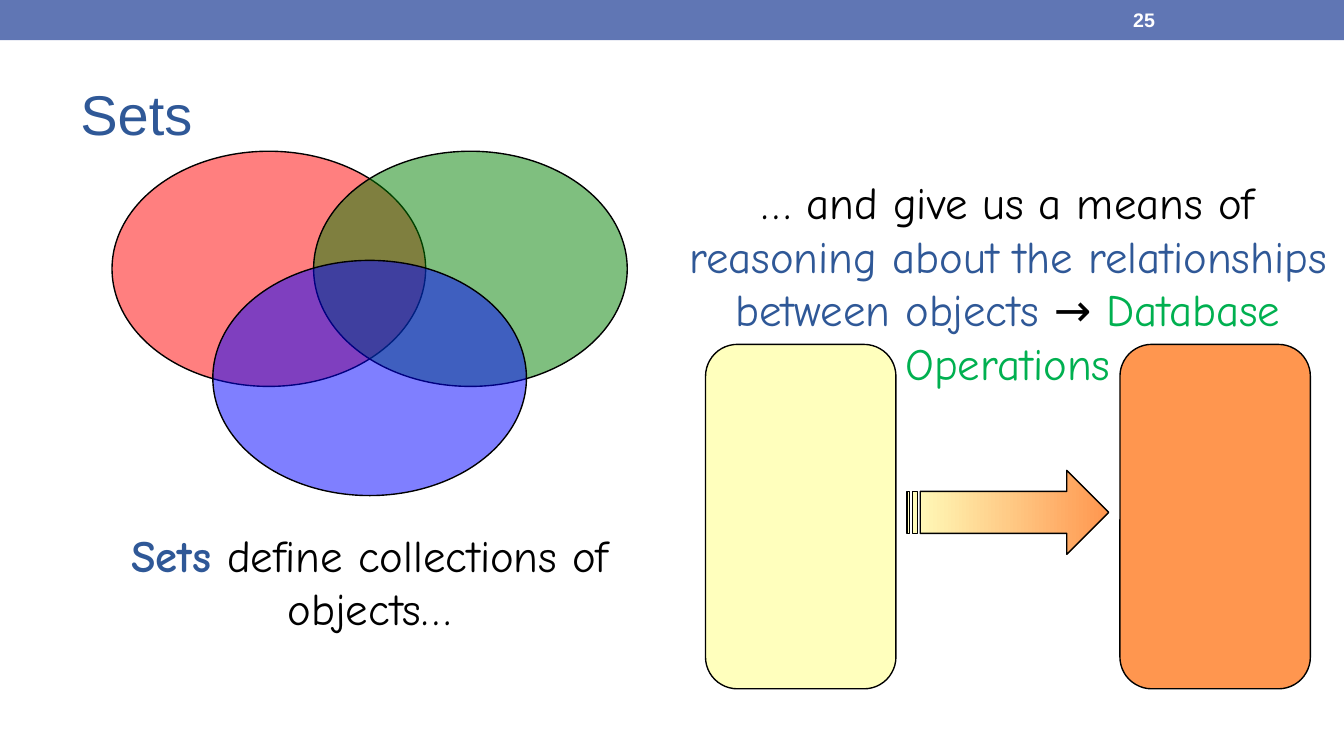
from dataclasses import dataclass
from lxml import etree
from pptx import Presentation
from pptx.dml.color import RGBColor
from pptx.enum.shapes import MSO_SHAPE
from pptx.enum.text import MSO_ANCHOR, MSO_AUTO_SIZE, PP_ALIGN
from pptx.oxml.ns import qn
from pptx.util import Pt

RECT = MSO_SHAPE.RECTANGLE
OVAL = MSO_SHAPE.OVAL
ROUND = MSO_SHAPE.ROUNDED_RECTANGLE
ARROW = MSO_SHAPE.STRIPED_RIGHT_ARROW
TOP, MIDDLE = MSO_ANCHOR.TOP, MSO_ANCHOR.MIDDLE
LEFT, CENTER = PP_ALIGN.LEFT, PP_ALIGN.CENTER
GROW = MSO_AUTO_SIZE.SHAPE_TO_FIT_TEXT


@dataclass(frozen=True)
class Theme:
    bar: str = "6076B4"
    blue: str = "2F5897"
    black: str = "000000"
    white: str = "FFFFFF"
    green: str = "00B050"
    cream: str = "FFFFBD"
    orange: str = "FF964F"
    sets: tuple = ("FF0000", "008000", "0000FF")
    alpha: int = 50
    sans: str = "Arial"
    hand: str = "Comic Neue"
    title: float = 30
    body: float = 24
    small: float = 10.5
    line: float = 0.75


THEME = Theme()


def color(code):
    return RGBColor.from_string(code)


def add_shape(slide, kind, box, fill=None, line=THEME.black):
    shape = slide.shapes.add_shape(kind, *map(Pt, box))
    shape.shadow.inherit = False
    if fill:
        shape.fill.solid()
        shape.fill.fore_color.rgb = color(fill)
    if line:
        shape.line.color.rgb = color(line)
        shape.line.width = Pt(THEME.line)
    else:
        shape.line.fill.background()
    return shape


def add_text(slide, box, parts, size, font, align=LEFT, anchor=TOP):
    shape = slide.shapes.add_textbox(*map(Pt, box))
    frame = shape.text_frame
    frame.word_wrap = True
    frame.vertical_anchor = anchor
    if anchor == TOP:
        frame.auto_size = GROW
    para = frame.paragraphs[0]
    para.alignment = align
    for text, code, bold in parts:
        run = para.add_run()
        run.text = text
        run.font.name = font
        run.font.size = Pt(size)
        run.font.bold = bold
        run.font.color.rgb = color(code)


def fade(shape, percent):
    tone = shape.fill._xPr.find(qn("a:solidFill"))[0]
    etree.SubElement(tone, qn("a:alpha")).set("val", str(percent * 1000))


def draw_header(slide, box):
    left, top, width, height = box
    add_shape(slide, RECT, box, THEME.bar, None)
    add_text(slide, (left + 600, top + 1, 84, height - 2),
             [("25", THEME.white, True)], THEME.small, THEME.sans, anchor=MIDDLE)


def draw_title(slide, box):
    add_text(slide, box, [("Sets", THEME.blue, False)],
             THEME.title, THEME.sans, anchor=MIDDLE)


def draw_venn(slide, box):
    left, top, width, height = box
    wide, high = 168, 126
    step, drop = width - wide, height - high
    spots = ((0, 0), (step, 0), (step / 2, drop))
    for (x, y), fill in zip(spots, THEME.sets):
        oval = add_shape(slide, OVAL, (left + x, top + y, wide, high), fill)
        fade(oval, THEME.alpha)


def draw_note(slide, box, parts):
    add_text(slide, box, parts, THEME.body, THEME.hand, CENTER)


def draw_flow(slide, box):
    left, top, width, height = box
    wide, gap, thick = 102, 6, 45
    ends = ((left, THEME.cream), (left + width - wide, THEME.orange))
    for x, fill in ends:
        card = add_shape(slide, ROUND, (x, top, wide, height), fill)
        card.adjustments[0] = 0.167
    inset = wide + gap
    arrow = add_shape(slide, ARROW, (left + inset, top + 67.5,
                                     width - 2 * inset, thick))
    arrow.fill.gradient()
    arrow.fill.gradient_angle = 0
    for stop, place, (x, code) in zip(arrow.fill.gradient_stops, (0, 1), ends):
        stop.position = place
        stop.color.rgb = color(code)


def main():
    deck = Presentation()
    deck.slide_width, deck.slide_height = Pt(720), Pt(405)
    slide = deck.slides.add_slide(deck.slide_layouts[6])
    draw_header(slide, (0, 0, 720, 21.6))
    draw_title(slide, (36, 31.5, 648, 58.5))
    draw_venn(slide, (60, 81, 276, 184.5))
    draw_note(slide, (48, 279, 300, 65.5), [
        ("Sets ", THEME.blue, True),
        ("define collections of objects…", THEME.black, False)])
    draw_flow(slide, (378, 184.5, 324, 184.5))
    draw_note(slide, (360, 90, 360, 94.5), [
        ("… and give us a means of ", THEME.black, False),
        ("reasoning about the relationships between objects ", THEME.blue, False),
        ("→ ", THEME.black, False),
        ("Database Operations", THEME.green, False)])
    deck.save("out.pptx")


if __name__ == "__main__":
    main()
